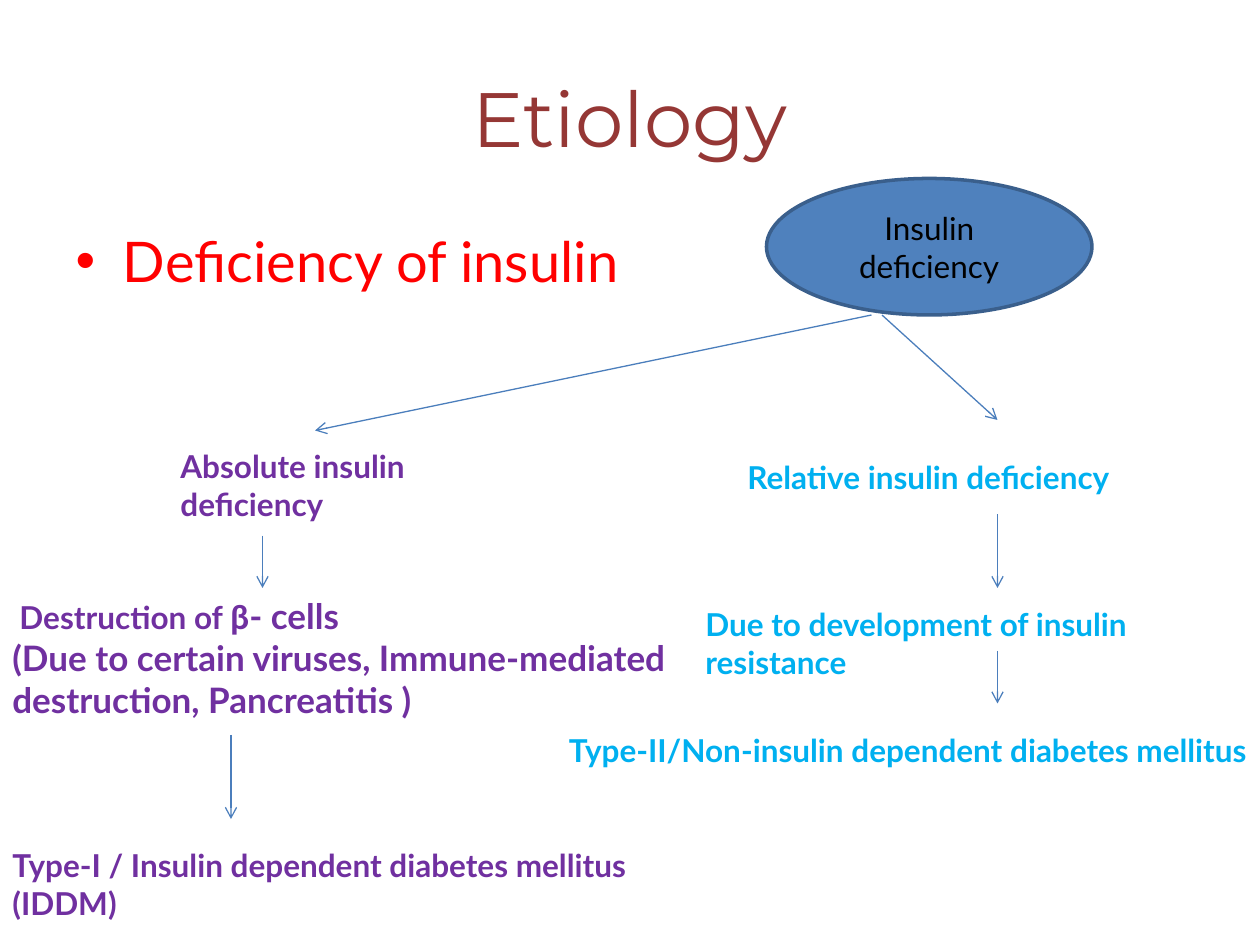
import pptx
import pptx.util
import pptx.dml.color
import pptx.enum.shapes
import pptx.enum.text
import lxml.etree
import pptx.oxml.ns

RGBColor = pptx.dml.color.RGBColor
MAROON = RGBColor(0x95, 0x37, 0x35)
RED = RGBColor(0xFF, 0x00, 0x00)
BLACK = RGBColor(0x00, 0x00, 0x00)
PURPLE = RGBColor(0x70, 0x30, 0xA0)
CYAN = RGBColor(0x00, 0xB0, 0xF0)
BLUE = RGBColor(0x4F, 0x81, 0xBD)
DARK_BLUE = RGBColor(0x3A, 0x5F, 0x8C)
ARROW_BLUE = RGBColor(0x4B, 0x7E, 0xBC)

GRID_PER_INCH = 12
SLIDE_GRID = (120, 90)

TITLE = ("Etiology", (6, 3.6, 108, 15))
BULLET = ("Deficiency of insulin", (6, 21, 108, 59.4))
ROOT = ("Insulin deficiency", (73, 17, 31, 13))

LABELS = [
    ((16, 42, 26, 8.5), PURPLE, [[("Absolute insulin deficiency", 18)]]),
    ((0, 56, 67, 13.3), PURPLE, [
        [(" ", 18, "Calibri"), ("Destruction of ", 18), ("β", 20, "Calibri"), ("- cells", 20)],
        [("(Due to certain viruses, Immune-mediated destruction, Pancreatitis )", 20)],
    ]),
    ((0, 80, 68, 8.5), PURPLE, [[("Type-I / Insulin dependent diabetes mellitus (IDDM)", 18)]]),
    ((70, 43, 43, 4.8), CYAN, [[("Relative insulin deficiency", 18)]]),
    ((66, 57, 54.4, 8.5), CYAN, [[("Due to development of insulin resistance", 18)]]),
    ((53, 69, 67, 8.5), CYAN, [[("Type-II/Non-insulin dependent diabetes mellitus", 18)]]),
]

ARROWS = [
    ((83, 30), (30, 41)),
    ((84, 30), (95, 40)),
    ((25, 51), (25, 56)),
    ((22, 70), (22, 78)),
    ((95, 49), (95, 56)),
    ((95, 62), (95, 67)),
]


def grid(*values):
    return [pptx.util.Inches(value / GRID_PER_INCH) for value in values]


def place(shape, box):
    shape.left, shape.top, shape.width, shape.height = grid(*box)


def add_run(paragraph, text, size, color, font="Lato", bold=None):
    run = paragraph.add_run()
    run.text = text
    run.font.size = pptx.util.Pt(size)
    run.font.name = font
    run.font.bold = bold
    run.font.color.rgb = color


def add_root(slide, text, box):
    shape = slide.shapes.add_shape(pptx.enum.shapes.MSO_SHAPE.OVAL, *grid(*box))
    shape.shadow.inherit = False
    shape.fill.solid()
    shape.fill.fore_color.rgb = BLUE
    shape.line.color.rgb = DARK_BLUE
    shape.line.width = pptx.util.Pt(2)
    shape.text_frame.vertical_anchor = pptx.enum.text.MSO_ANCHOR.MIDDLE
    paragraph = shape.text_frame.paragraphs[0]
    paragraph.alignment = pptx.enum.text.PP_ALIGN.CENTER
    add_run(paragraph, text, 18, BLACK)


def add_label(slide, box, color, lines):
    frame = slide.shapes.add_textbox(*grid(*box)).text_frame
    frame.word_wrap = True
    for index, runs in enumerate(lines):
        paragraph = frame.add_paragraph() if index else frame.paragraphs[0]
        for text, size, *font in runs:
            add_run(paragraph, text, size, color, *(font or ["Lato"]), bold=True)


def add_arrow(slide, start, end):
    arrow = slide.shapes.add_connector(
        pptx.enum.shapes.MSO_CONNECTOR.STRAIGHT, *grid(*start, *end))
    arrow.line.color.rgb = ARROW_BLUE
    arrow.line.width = pptx.util.Pt(0.75)
    qn = pptx.oxml.ns.qn
    lxml.etree.SubElement(arrow.line._get_or_add_ln(), qn("a:tailEnd"), type="arrow")
    lxml.etree.SubElement(arrow._element.spPr, qn("a:effectLst"))


def main():
    presentation = pptx.Presentation()
    presentation.slide_width, presentation.slide_height = grid(*SLIDE_GRID)
    slide = presentation.slides.add_slide(presentation.slide_layouts[1])

    title, body = slide.shapes.title, slide.placeholders[1]
    place(title, TITLE[1])
    title.text_frame.vertical_anchor = pptx.enum.text.MSO_ANCHOR.MIDDLE
    add_run(title.text_frame.paragraphs[0], TITLE[0], 44, MAROON, "Montserrat")
    place(body, BULLET[1])
    add_run(body.text_frame.paragraphs[0], BULLET[0], 32, RED)

    add_root(slide, *ROOT)
    for label in LABELS:
        add_label(slide, *label)
    for arrow in ARROWS:
        add_arrow(slide, *arrow)
    presentation.save("out.pptx")


if __name__ == "__main__":
    main()
